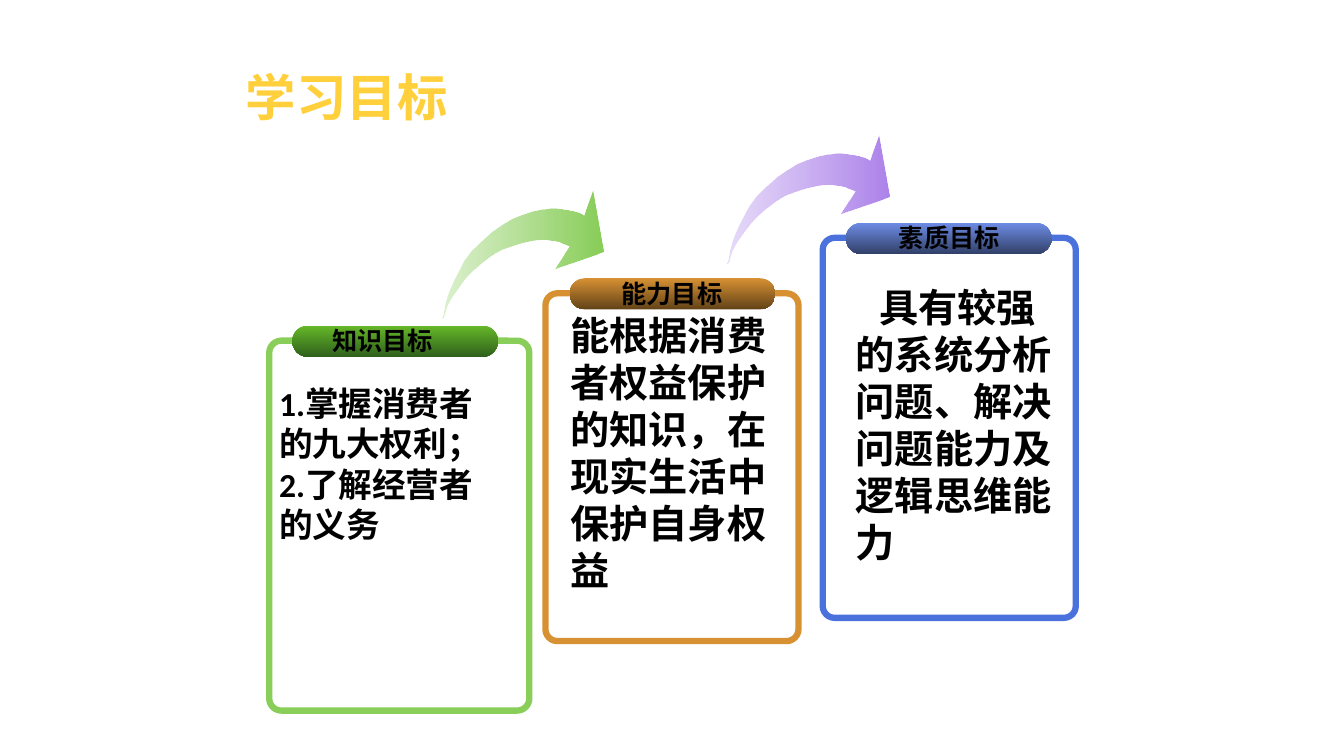
from lxml.etree import SubElement
from pptx import Presentation
from pptx.dml.color import RGBColor
from pptx.enum.shapes import MSO_SHAPE
from pptx.enum.text import MSO_ANCHOR, PP_ALIGN
from pptx.oxml.ns import qn
from pptx.util import Inches, Pt

COLORS = {
    "title": "FFD03B", "text": "000000",
    "green": "88CE58", "green_top": "66B828", "green_bottom": "2F611D",
    "orange": "D79133", "orange_top": "D79133", "orange_bottom": "634318",
    "blue": "4B71DD", "blue_top": "6D8CE5", "blue_bottom": "32416A",
    "arrow_green": "93D267", "arrow_purple": "B48EED", "purple": "AD83EB",
}


def add_text(box, text, size, color="text", font="Calibri", wrap=True):
    text_box = slide.shapes.add_textbox(*map(Inches, box))
    frame = text_box.text_frame
    frame.word_wrap = wrap
    paragraph = frame.paragraphs[0]
    paragraph.text = text
    paragraph.font.name = font
    paragraph.font.size = Pt(size)
    paragraph.font.bold = True
    paragraph.font.color.rgb = RGBColor.from_string(COLORS[color])
    properties = paragraph._p.get_or_add_pPr().find(qn("a:defRPr"))
    east_asian = SubElement(properties, qn("a:ea"))
    east_asian.set("typeface", "Noto Sans CJK SC")
    return frame


def fill_gradient(shape, start, end, angle):
    shape.shadow.inherit = False
    shape.line.fill.background()
    shape.fill.gradient()
    shape.fill.gradient_angle = angle
    for stop, color in zip(shape.fill.gradient_stops, (start, end)):
        stop.color.rgb = RGBColor.from_string(COLORS[color])
    for stop, position in zip(shape.fill.gradient_stops, (0, 1)):
        stop.position = position


presentation = Presentation()
presentation.slide_width = Inches(13.33)
presentation.slide_height = Inches(7.5)
slide = presentation.slides.add_slide(presentation.slide_layouts[6])

# Title
title = add_text((2.34, 0.64, 8.66, 0.71), "学习目标", 36, "title", "Noto Sans CJK SC")
title.vertical_anchor = MSO_ANCHOR.MIDDLE
title.paragraphs[0].line_spacing = 0.9

# Cards with header pills: color, card box, pill left
cards = [
    ("green", (2.67, 3.38, 2.58, 3.67), 2.9),
    ("orange", (5.41, 2.91, 2.51, 3.45), 5.65),
    ("blue", (8.16, 2.36, 2.51, 3.77), 8.39),
]
for color, box, pill_left in cards:
    card = slide.shapes.add_shape(MSO_SHAPE.ROUNDED_RECTANGLE, *map(Inches, box))
    card.adjustments[0] = 0.047
    card.shadow.inherit = False
    card.fill.background()
    card.line.color.rgb = RGBColor.from_string(COLORS[color])
    card.line.width = Pt(4.5)

    pill_box = (pill_left, box[1] - 0.15, 2.04, 0.31)
    pill = slide.shapes.add_shape(MSO_SHAPE.ROUNDED_RECTANGLE, *map(Inches, pill_box))
    pill.adjustments[0] = 0.5
    fill_gradient(pill, color + "_top", color + "_bottom", 270)

# Curved arrows: outline in hundredths of an inch from the tail
outline = [
    (1, -1), (2, -3), (3, -7), (5, -13), (8, -19), (13, -26), (18, -33),
    (23, -40), (31, -48), (39, -55), (48, -62), (59, -68), (70, -72),
    (80, -75), (89, -77), (97, -78), (104, -78), (111, -77), (116, -76),
    (120, -74), (123, -73), (125, -72), (126, -72), (111, -49), (160, -66),
    (149, -127), (140, -102), (139, -103), (137, -104), (135, -105),
    (131, -106), (126, -107), (120, -108), (113, -109), (106, -109),
    (98, -108), (88, -106), (79, -103), (69, -99), (58, -92), (48, -85),
    (38, -76), (29, -67), (22, -58), (17, -48), (12, -39), (8, -30),
    (5, -22), (3, -15), (2, -9), (1, -4), (0, -1),
]
arrows = [
    (4.39, 3.16, "arrow_green", "green"),
    (7.22, 2.61, "arrow_purple", "purple"),
]
for tail_x, tail_y, start, end in arrows:
    builder = slide.shapes.build_freeform(0, 0, scale=Inches(0.01))
    builder.add_line_segments(outline, close=True)
    arrow = builder.convert_to_shape(Inches(tail_x), Inches(tail_y))
    fill_gradient(arrow, start, end, 0)
    first_color = arrow.element.spPr.find(".//" + qn("a:srgbClr"))
    SubElement(first_color, qn("a:alpha")).set("val", "32000")

# Header labels
labels = [("知识目标", 3.19, 3.18), ("能力目标", 6.06, 2.71), ("素质目标", 8.81, 2.16)]
for text, left, top in labels:
    label = add_text((left, top, 1.21, 0.4), text, 18, wrap=False)
    label.paragraphs[0].alignment = PP_ALIGN.CENTER

# Goal texts
add_text((2.67, 3.75, 2.27, 1.7), "1.掌握消费者的九大权利；2.了解经营者的义务", 24)
add_text((5.56, 3.04, 2.27, 2.9), "能根据消费者权益保护的知识，在现实生活中保护自身权益", 28)
quality = add_text((8.39, 2.76, 2.27, 3.37),
                   "具有较强的系统分析问题、解决问题能力及逻辑思维能力", 28)
quality.paragraphs[0]._p.get_or_add_pPr().set("indent", str(Inches(0.23)))

presentation.save("out.pptx")
